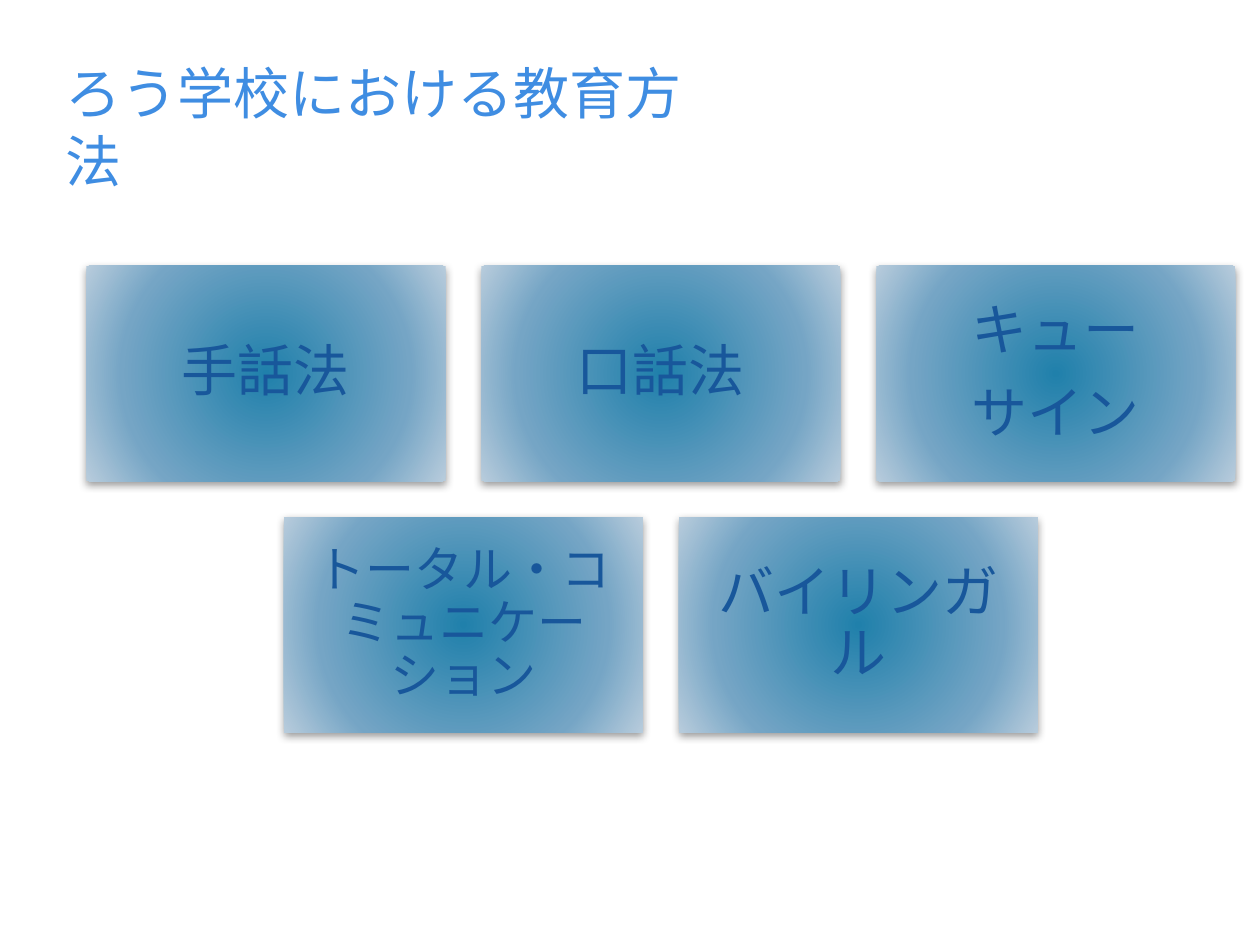
from pptx import Presentation
from pptx.dml.color import RGBColor
from pptx.enum.shapes import MSO_SHAPE
from pptx.enum.text import MSO_ANCHOR, MSO_AUTO_SIZE, PP_ALIGN
from pptx.oxml import parse_xml
from pptx.oxml.ns import nsdecls, qn
from pptx.util import Pt

TITLE = "ろう学校における教育方法"
ROWS = [
    [(["手話法"], 32), (["口話法"], 32), (["キュー", "サイン"], 32)],
    [(["トータル・コミュニケーション"], 28), (["バイリンガル"], 32)],
]
STOPS = [(0, "2080AB"), (69, "75A5C5"), (100, "B8CCDC")]
TITLE_COLOR, CARD_COLOR = "3F8DE2", "18579B"
WIDTH, HEIGHT, GAP = 205.2, 123.1, 20.5
CENTER, TOP = 377.7, 151.9


def color(value):
    return RGBColor.from_string(value)


def apply(target, values):
    for name, value in values.items():
        setattr(target, name, value)


def write(paragraph, text, size, font_color, **layout):
    run = paragraph.add_run()
    run.text = text
    apply(run.font, {"name": "Roboto", "size": Pt(size)})
    run.font.color.rgb = color(font_color)
    apply(paragraph, layout)


def style_card(shape):
    shape.line.fill.background()
    shape.fill.background()
    shape.shadow.inherit = False
    stops = "".join(
        f'<a:gs pos="{position * 1000}"><a:srgbClr val="{value}"/></a:gs>'
        for position, value in STOPS
    )
    gradient = parse_xml(
        f'<a:gradFill {nsdecls("a")} rotWithShape="1"><a:gsLst>{stops}</a:gsLst>'
        '<a:path path="circle"><a:fillToRect l="100000" t="100000" r="100000" b="100000"/>'
        "</a:path></a:gradFill>"
    )
    shadow = parse_xml(
        f'<a:outerShdw {nsdecls("a")} blurRad="{Pt(5)}" dist="{Pt(2)}" dir="5400000" rotWithShape="0">'
        '<a:srgbClr val="000000"><a:alpha val="40000"/></a:srgbClr></a:outerShdw>'
    )
    properties = shape.element.spPr
    properties.replace(properties.find(qn("a:noFill")), gradient)
    properties.find(qn("a:effectLst")).append(shadow)


def add_card(slide, left, top, lines, size):
    shape = slide.shapes.add_shape(
        MSO_SHAPE.RECTANGLE, Pt(left), Pt(top), Pt(WIDTH), Pt(HEIGHT)
    )
    style_card(shape)
    frame = shape.text_frame
    inset = Pt(size * 0.3)
    sides = ("left", "top", "right", "bottom")
    apply(frame, {f"margin_{side}": inset for side in sides})
    apply(frame, {"word_wrap": True, "vertical_anchor": MSO_ANCHOR.MIDDLE})
    for index, line in enumerate(lines):
        paragraph = frame.add_paragraph() if index else frame.paragraphs[0]
        write(paragraph, line, size, CARD_COLOR,
              alignment=PP_ALIGN.CENTER, line_spacing=0.9, space_after=Pt(size * 0.4))


def main():
    """Build the slide of teaching methods used in schools for the deaf."""
    presentation = Presentation()
    apply(presentation, {"slide_width": Pt(720), "slide_height": Pt(540)})
    slide = presentation.slides.add_slide(presentation.slide_layouts[5])

    title = slide.shapes.title
    apply(title, {"left": Pt(30), "top": Pt(30), "width": Pt(378), "height": Pt(46)})
    apply(title.text_frame, {"word_wrap": True, "vertical_anchor": MSO_ANCHOR.TOP,
                             "auto_size": MSO_AUTO_SIZE.SHAPE_TO_FIT_TEXT})
    write(title.text_frame.paragraphs[0], TITLE, 32, TITLE_COLOR, alignment=PP_ALIGN.LEFT)

    for row, cards in enumerate(ROWS):
        start = CENTER - (len(cards) * (WIDTH + GAP) - GAP) / 2
        for column, (lines, size) in enumerate(cards):
            add_card(slide, start + column * (WIDTH + GAP), TOP + row * (HEIGHT + GAP), lines, size)

    presentation.save("out.pptx")


if __name__ == "__main__":
    main()
